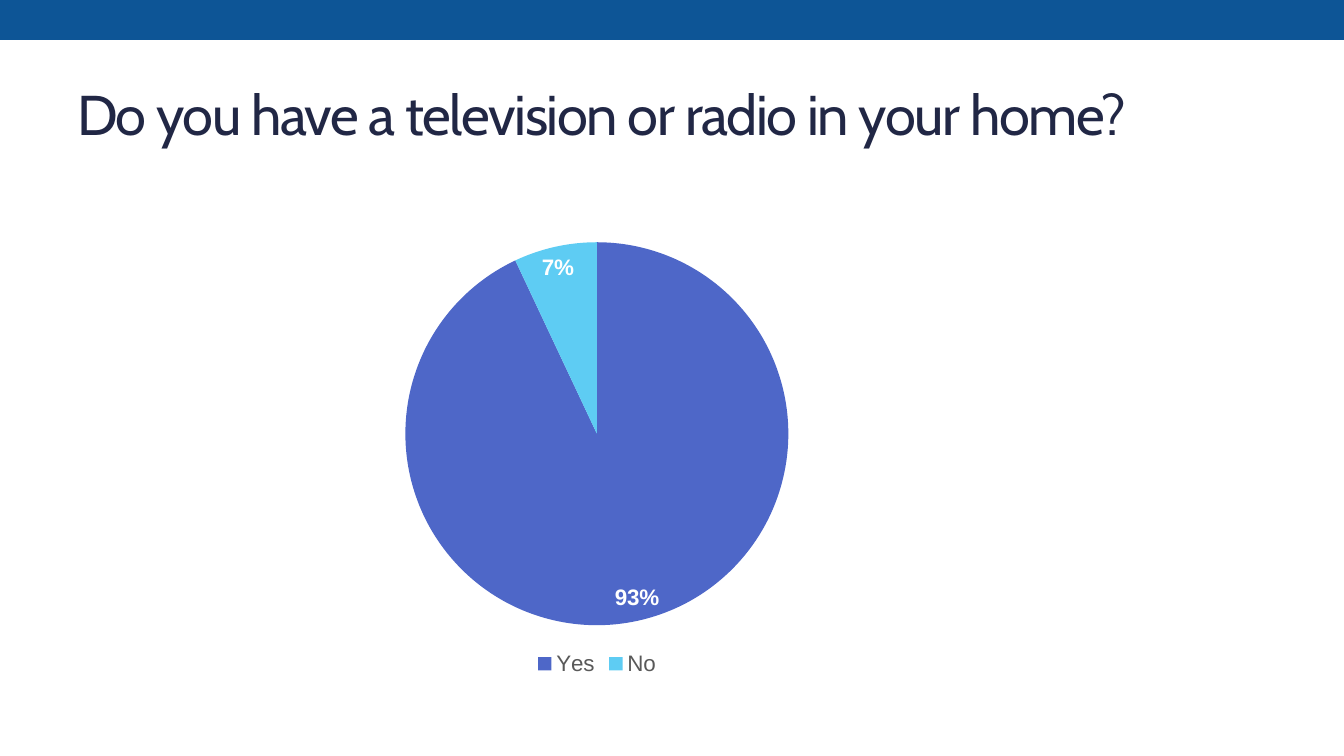
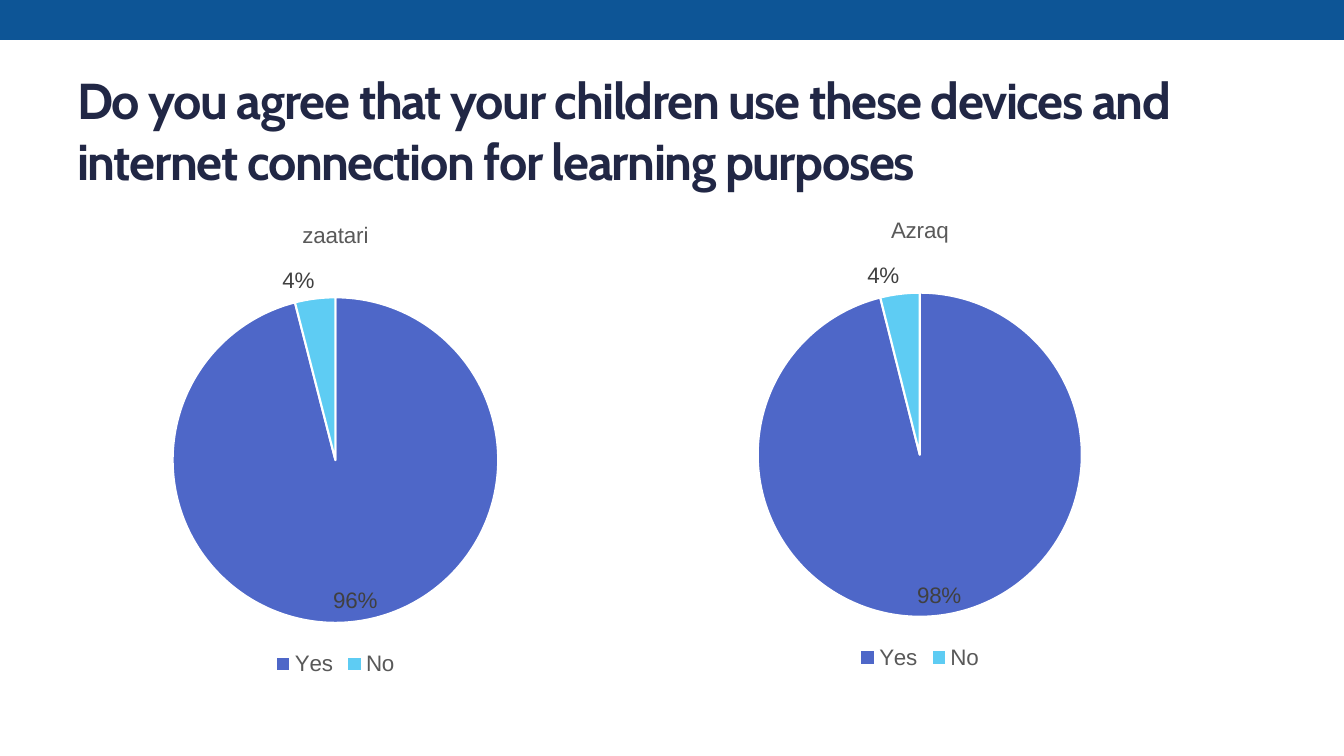
from lxml import etree
from pptx import Presentation
from pptx.chart.data import CategoryChartData
from pptx.dml.color import RGBColor
from pptx.enum.chart import XL_CHART_TYPE, XL_LABEL_POSITION, XL_LEGEND_POSITION
from pptx.enum.shapes import MSO_SHAPE
from pptx.enum.text import MSO_ANCHOR
from pptx.oxml.ns import qn
from pptx.util import Pt

PIE = XL_CHART_TYPE.PIE
FIT = XL_LABEL_POSITION.BEST_FIT
BELOW = XL_LEGEND_POSITION.BOTTOM
RECT = MSO_SHAPE.RECTANGLE
MIDDLE = MSO_ANCHOR.MIDDLE

PX = 9525
WIDE, HIGH = 1280, 720
HEAD, BODY = "Cabin", "Arial"
COLORS = {
    "band": "0D5596",
    "title": "212745",
    "yes": "4E67C8",
    "no": "5ECCF3",
    "grey": "595959",
    "dark": "404040",
    "white": "FFFFFF",
    "black": "000000",
}


def color(name):
    return RGBColor.from_string(COLORS[name])


def scale(box):
    return [n * PX for n in box]


def style(font, face=BODY, size=16, tint="grey", bold=False):
    font.name = face
    font.size = Pt(size)
    font.bold = bold
    font.color.rgb = color(tint)


def add_text(slide, text, box, track=0, **form):
    """Add a wrapped, middle-anchored text box; track is in 1/100 pt."""
    frame = slide.shapes.add_textbox(*scale(box)).text_frame
    frame.word_wrap = True
    frame.vertical_anchor = MIDDLE
    run = frame.paragraphs[0].add_run()
    run.text = text
    style(run.font, **form)
    run.font._element.set("spc", str(track))


def add_band(slide):
    band = slide.shapes.add_shape(RECT, *scale((0, 0, WIDE, 38)))
    band.shadow.inherit = False
    band.fill.solid()
    band.fill.fore_color.rgb = color("band")
    band.line.fill.background()


def add_page(deck, title, box, size, bold=False):
    slide = deck.slides.add_slide(deck.slide_layouts[6])
    add_band(slide)
    add_text(slide, title, box, track=-100, face=HEAD, size=size,
             tint="title", bold=bold)
    return slide


def place_pie(chart, box, top, span):
    """Centre the pie; top and span are shares of the chart height."""
    wide = span * box[3] / box[2]
    area = chart._chartSpace.find(".//" + qn("c:plotArea"))
    for old in area.findall(qn("c:layout")):
        area.remove(old)
    layout = etree.Element(qn("c:layout"))
    area.insert(0, layout)
    manual = etree.SubElement(layout, qn("c:manualLayout"))
    parts = (("layoutTarget", "inner"), ("xMode", "edge"), ("yMode", "edge"),
             ("x", (1 - wide) / 2), ("y", top), ("w", wide), ("h", span))
    for tag, value in parts:
        etree.SubElement(manual, qn("c:" + tag)).set("val", str(value))


def add_pie(slide, box, values, top, span, title=None, edge=False, **form):
    """Add a yes/no pie; form sets the font of its value labels."""
    data = CategoryChartData(number_format="0%")
    data.categories = ["Yes", "No"]
    data.add_series("Series 1", values)
    chart = slide.shapes.add_chart(PIE, *scale(box), data).chart
    style(chart.font, size=10, tint="black")

    chart.has_title = bool(title)
    if title:
        frame = chart.chart_title.text_frame
        frame.text = title
        style(frame.paragraphs[0].runs[0].font)
        chart.chart_title.include_in_layout = False

    chart.has_legend = True
    chart.legend.position = BELOW
    chart.legend.include_in_layout = False
    style(chart.legend.font)

    plot = chart.plots[0]
    plot.vary_by_categories = True
    for i, name in enumerate(("yes", "no")):
        part = plot.series[0].points[i].format
        part.fill.solid()
        part.fill.fore_color.rgb = color(name)
        if edge:
            part.line.color.rgb = color("white")
            part.line.width = Pt(1.5)
        else:
            part.line.fill.background()

    labels = plot.series[0].data_labels
    labels.show_value = True
    labels.show_percentage = False
    labels.number_format = "0%"
    labels.number_format_is_linked = False
    labels.position = FIT
    style(labels.font, **form)
    place_pie(chart, box, top, span)


def main():
    deck = Presentation()
    deck.slide_width, deck.slide_height = scale((WIDE, HIGH))

    slide = add_page(deck, "Do you have a television or radio in your home?",
                     (64, 56, 1152, 104), 40)
    add_pie(slide, (88, 192, 961, 456), (0.93, 0.07), 0.085, 0.8,
            tint="white", bold=True)

    slide = add_page(deck, "Do you agree that your children use these devices "
                     "and internet connection for learning purposes",
                     (64, 59, 1147, 129), 36, bold=True)
    camps = (("zaatari", (64, 192, 511, 456), (0.96, 0.04)),
             ("Azraq", (588, 188, 576, 454), (0.98, 0.04)))
    for name, box, values in camps:
        add_pie(slide, box, values, 0.2, 0.68, title=name, edge=True,
                tint="dark")

    deck.save("out.pptx")


if __name__ == "__main__":
    main()
